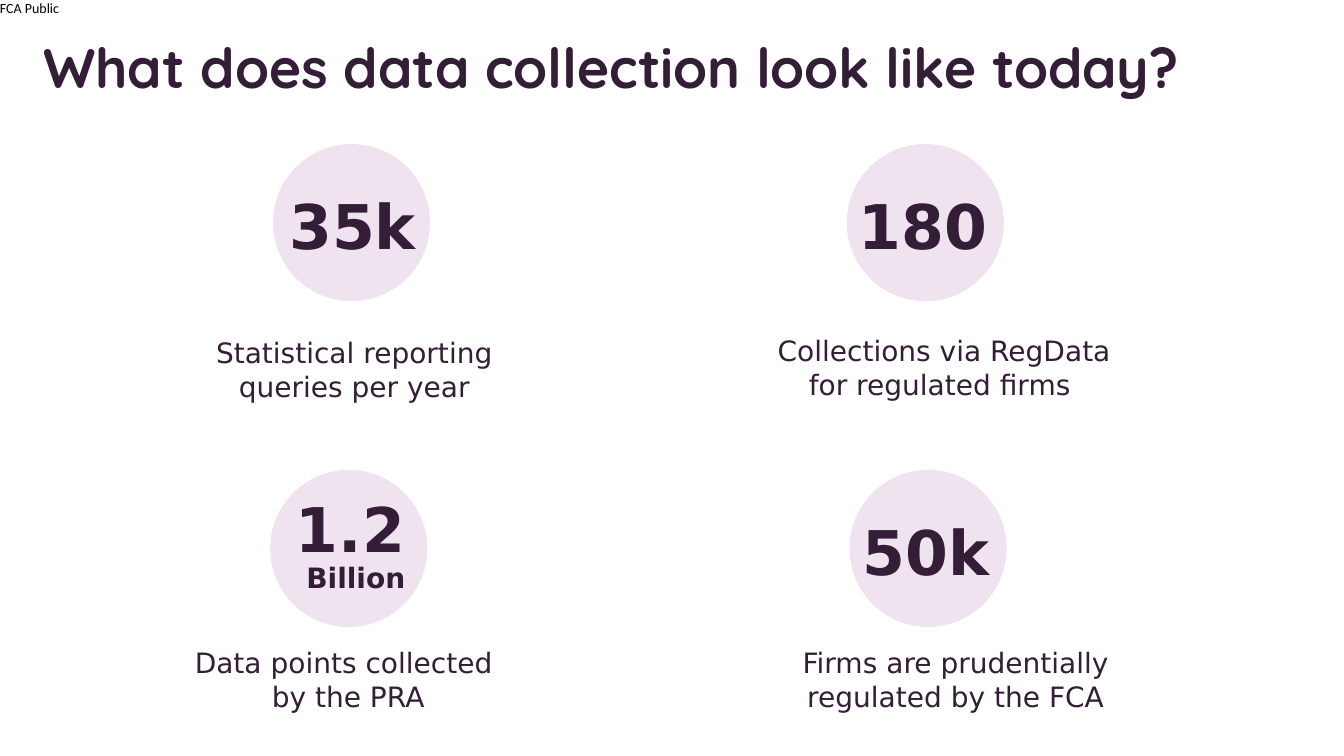
from typing import NamedTuple

import pptx
import pptx.dml.color
import pptx.enum.shapes
import pptx.enum.text
import pptx.util
from pptx.enum.text import MSO_ANCHOR, MSO_AUTO_SIZE, PP_ALIGN
from pptx.util import Cm

PLUM = pptx.dml.color.RGBColor(0x34, 0x1D, 0x36)
LILAC = pptx.dml.color.RGBColor(0xEF, 0xE3, 0xF0)
BLACK = pptx.dml.color.RGBColor(0, 0, 0)
BODY_FONT = "DejaVu Sans"
DIAMETER = 3.96


class Box(NamedTuple):
    left: float
    top: float
    width: float
    height: float


class Figure(NamedTuple):
    text: str
    box: Box
    size: float = 44


class Stat(NamedTuple):
    left: float
    top: float
    figures: list[Figure]
    caption: str
    caption_box: Box


STATS = [
    Stat(6.88, 3.63, [Figure("35k", Box(7.04, 4.6, 3.78, 2.13))],
         "Statistical reporting queries per year", Box(5.08, 8.33, 7.7, 1.96)),
    Stat(21.34, 3.63, [Figure("180", Box(21.39, 4.6, 3.86, 2.13))],
         "Collections via RegData for regulated firms ", Box(19.25, 8.28, 9.09, 2.82)),
    Stat(6.81, 11.84, [Figure("1.2", Box(7.21, 12.24, 3.3, 2.13)),
                       Figure("Billion", Box(7.47, 14, 3.28, 1.12), 20)],
         "Data points collected \nby the PRA", Box(3.71, 16.15, 10.13, 1.96)),
    Stat(21.41, 11.84, [Figure("50k", Box(21.49, 12.83, 3.78, 2.13))],
         "Firms are prudentially regulated by the FCA", Box(19.02, 16.15, 10.13, 1.96)),
]


def add_text(s: pptx.slide.Slide, text: str, box: Box, size: float,
             font: str = BODY_FONT, color: pptx.dml.color.RGBColor = PLUM,
             bold: bool = False, align: PP_ALIGN = PP_ALIGN.LEFT,
             wrap: bool = True) -> pptx.text.text.TextFrame:
    tf = s.shapes.add_textbox(*map(Cm, box)).text_frame
    tf.word_wrap = wrap
    tf.auto_size = MSO_AUTO_SIZE.SHAPE_TO_FIT_TEXT
    p = tf.paragraphs[0]
    p.text = text
    p.alignment = align
    for r in p.runs:
        r.font.name = font
        r.font.size = pptx.util.Pt(size)
        r.font.bold = bold
        r.font.color.rgb = color
    return tf


def add_stat(s: pptx.slide.Slide, stat: Stat) -> None:
    sp = s.shapes.add_shape(pptx.enum.shapes.MSO_SHAPE.OVAL, Cm(stat.left),
                            Cm(stat.top), Cm(DIAMETER), Cm(DIAMETER))
    sp.shadow.inherit = False
    sp.fill.solid()
    sp.fill.fore_color.rgb = LILAC
    sp.line.fill.background()
    for figure in stat.figures:
        add_text(s, figure.text, figure.box, figure.size, bold=True, wrap=False)
    add_text(s, stat.caption, stat.caption_box, 20, align=PP_ALIGN.CENTER)


def main() -> None:
    prs = pptx.Presentation()
    prs.slide_width, prs.slide_height = Cm(33.87), Cm(19.05)
    s = prs.slides.add_slide(prs.slide_layouts[6])

    tf = add_text(s, "FCA Public", Box(0, 0, 1.57, 0.43), 10, "Calibri", BLACK, wrap=False)
    tf.margin_left = tf.margin_top = tf.margin_right = tf.margin_bottom = 0

    tf = add_text(s, "What does data collection look like today?",
                  Box(0.84, 0.2, 30.89, 2.95), 39.6, "Quicksand", bold=True)
    tf.auto_size = MSO_AUTO_SIZE.NONE
    tf.vertical_anchor = MSO_ANCHOR.MIDDLE

    for stat in STATS:
        add_stat(s, stat)
    prs.save("out.pptx")


if __name__ == "__main__":
    main()
